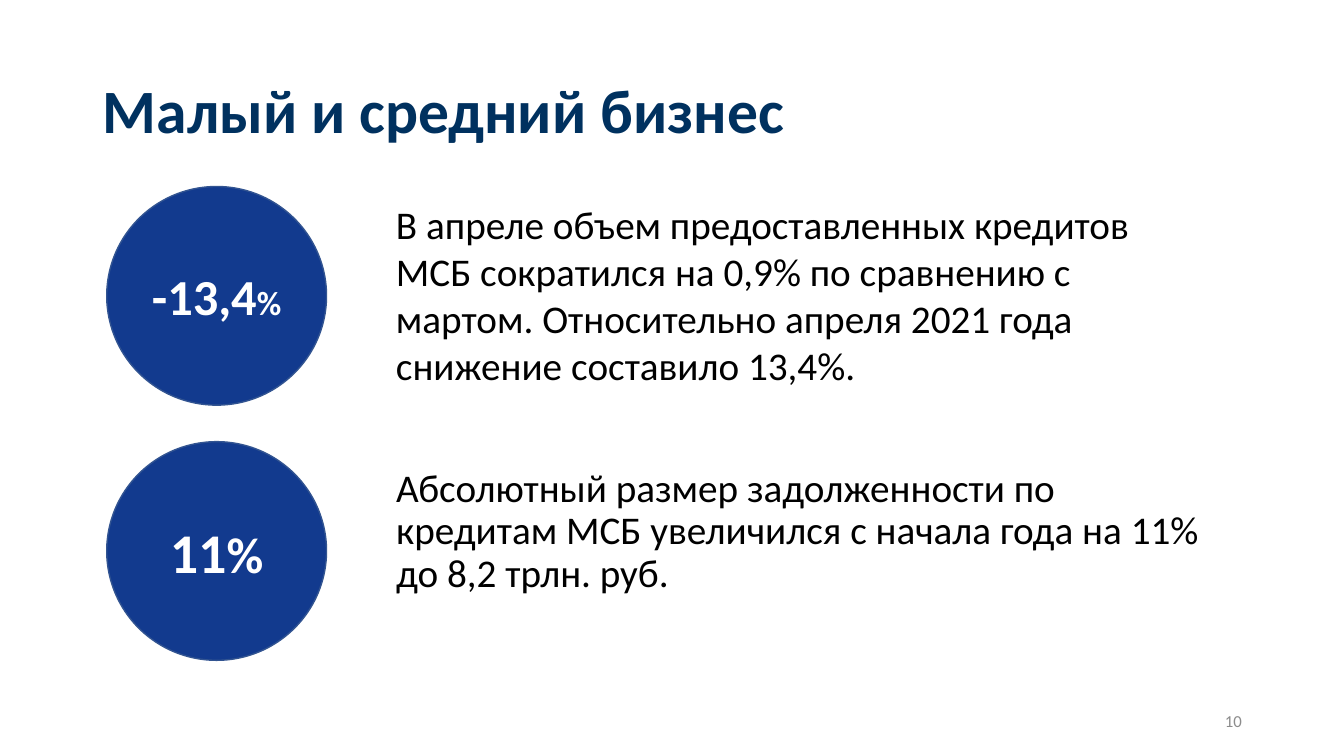
import pptx
import pptx.util
import pptx.dml.color
import pptx.enum.shapes
import pptx.enum.text
import lxml.etree

Cm, Pt = pptx.util.Cm, pptx.util.Pt
RGBColor = pptx.dml.color.RGBColor
PP_ALIGN = pptx.enum.text.PP_ALIGN
MSO_ANCHOR = pptx.enum.text.MSO_ANCHOR

NAVY = RGBColor(0x00, 0x31, 0x5F)
BLUE = RGBColor(0x12, 0x3A, 0x8E)
OUTLINE = RGBColor(0x32, 0x54, 0x91)
WHITE = RGBColor(0xFF, 0xFF, 0xFF)
BLACK = RGBColor(0x00, 0x00, 0x00)
GREY = RGBColor(0x8C, 0x8C, 0x8C)
FONT = "Calibri"


def place(sp, box):
    sp.left, sp.top, sp.width, sp.height = (Cm(v) for v in box)


def format_run(r, size, color, bold=False):
    r.font.name = FONT
    r.font.size = Pt(size)
    r.font.bold = bold
    r.font.color.rgb = color


def set_text(sp, text, size, color, bold=False, align=PP_ALIGN.LEFT,
             anchor=MSO_ANCHOR.TOP, spacing=1.0):
    tf = sp.text_frame
    tf.text = text
    tf.word_wrap = True
    tf.auto_size = pptx.enum.text.MSO_AUTO_SIZE.NONE
    tf.vertical_anchor = anchor
    p = tf.paragraphs[0]
    p.alignment = align
    p.line_spacing = spacing
    format_run(p.runs[0], size, color, bold)
    return p


def add_title(s, box):
    sp = s.shapes.title
    place(sp, box)
    set_text(sp, "Малый и средний бизнес", 44, NAVY, bold=True,
             anchor=MSO_ANCHOR.MIDDLE, spacing=0.9)


def add_badge(s, box, number, number_size, percent_size):
    sp = s.shapes.add_shape(pptx.enum.shapes.MSO_SHAPE.OVAL,
                            *(Cm(v) for v in box))
    sp.shadow.inherit = False
    sp.fill.solid()
    sp.fill.fore_color.rgb = BLUE
    sp.line.color.rgb = OUTLINE
    sp.line.width = Pt(1)
    p = set_text(sp, number, number_size, WHITE, bold=True,
                 align=PP_ALIGN.CENTER, anchor=MSO_ANCHOR.MIDDLE)
    r = p.add_run()
    r.text = "%"
    format_run(r, percent_size, WHITE, bold=True)


def add_lending(s, box):
    """Monthly lending: badge on the left, explanation on the right."""
    left, top, width, height = box
    add_badge(s, (left, top, 5.54, height), "-13,4", 36, 24)
    sp = s.shapes.add_textbox(Cm(left + 7.04), Cm(top + 0.23),
                              Cm(width - 7.4), Cm(5.05))
    set_text(sp, "В апреле объем предоставленных кредитов МСБ сократился "
             "на 0,9% по сравнению с мартом. Относительно апреля 2021 года "
             "снижение составило 13,4%.", 28, BLACK)


def add_debt(s, box):
    """Total debt: badge on the left, body placeholder on the right."""
    left, top, width, height = box
    add_badge(s, (left, top, 5.54, height), "11", 40, 36)
    sp = s.placeholders[1]
    place(sp, (left + 7.04, top + 0.55, width - 7.04, 3.68))
    p = set_text(sp, "Абсолютный размер задолженности по кредитам МСБ "
                 "увеличился с начала года на 11% до 8,2 трлн. руб.",
                 28, BLACK, spacing=0.9)
    p.space_before = Pt(10)
    # Plain paragraph: no bullet, no hanging indent
    pPr = p._p.get_or_add_pPr()
    pPr.set("marL", "0")
    pPr.set("indent", "0")
    lxml.etree.SubElement(pPr, pptx.oxml.ns.qn("a:buNone"))


def add_page_number(s, box):
    sp = s.shapes.add_textbox(*(Cm(v) for v in box))
    set_text(sp, "10", 12, GREY, align=PP_ALIGN.RIGHT,
             anchor=MSO_ANCHOR.MIDDLE)


def main():
    prs = pptx.Presentation()
    prs.slide_width, prs.slide_height = Cm(33.87), Cm(19.05)
    s = prs.slides.add_slide(prs.slide_layouts[1])

    add_title(s, (2.34, 1.02, 29.21, 3.68))

    # Two indicator rows at an equal step
    row_top, row_step = 4.7, 6.43
    for i, add_row in enumerate((add_lending, add_debt)):
        add_row(s, (2.69, row_top + i * row_step, 28.35, 5.51))

    add_page_number(s, (23.93, 17.65, 7.62, 1.02))
    prs.save("out.pptx")


if __name__ == "__main__":
    main()
